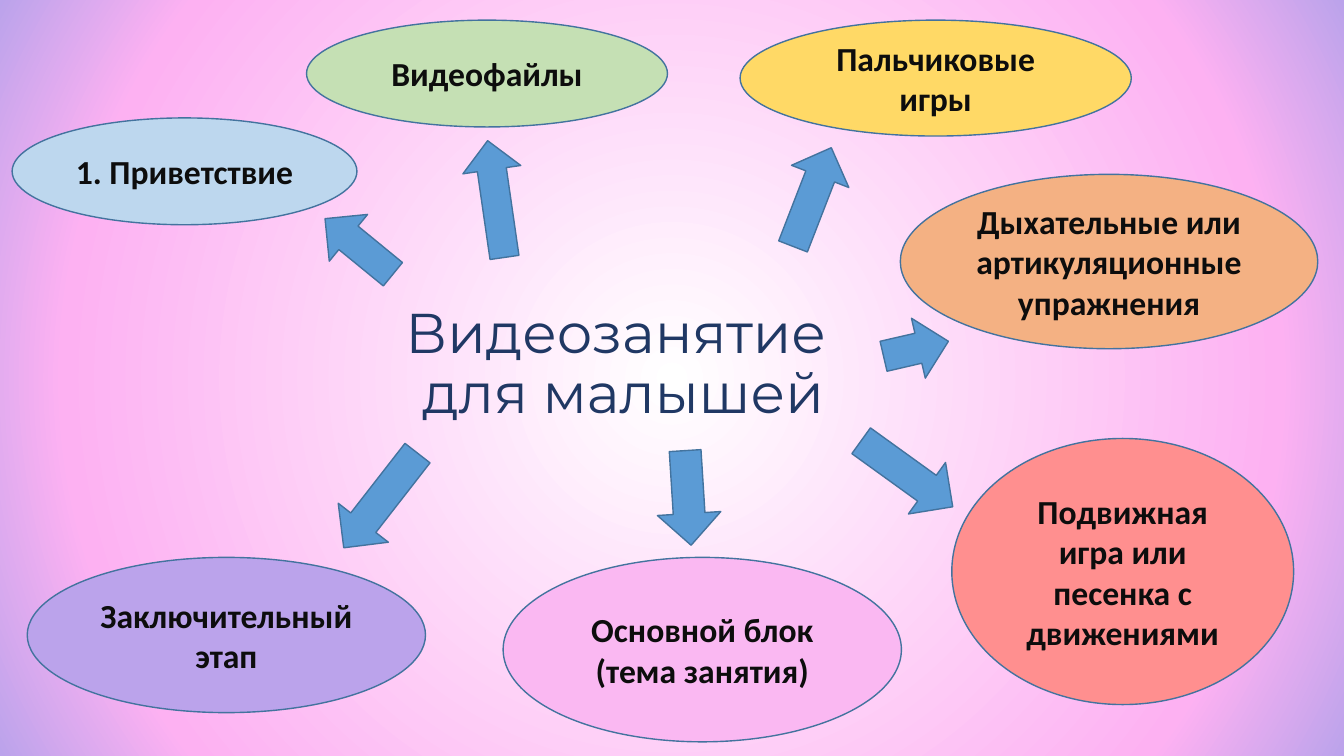
import pptx
import pptx.dml.color
import pptx.enum.shapes
import pptx.enum.text
import pptx.oxml
import pptx.oxml.ns
import pptx.util

COLORS = {
    "white": "FFFFFF",
    "pink": "FDB1F2",
    "violet": "BBA3EB",
    "pale_blue": "CEE1F2",
    "navy": "203864",
    "text": "0D0D0D",
    "outline": "43739E",
    "arrow": "5B9BD5",
    "sky": "BDD7EE",
    "green": "C5E0B4",
    "yellow": "FFD966",
    "orange": "F4B183",
    "red": "FF8F8F",
    "orchid": "FAB8F2",
}

BACKGROUND_STOPS = [(0, "white"), (79, "pink"), (100, "violet"), (100, "pale_blue")]

# Each stage: paragraphs, fill, bubble box, arrow box, arrow rotation
STAGES = [
    (["1. Приветствие"], "sky", (0.12, 1.17, 3.42, 1.06), (3.26, 2.01, 0.6, 0.87), 129.3),
    (["Видеофайлы"], "green", (3.04, 0.2, 3.58, 1.06), (4.63, 1.39, 0.58, 1.17), 171.8),
    (["Пальчиковые игры"], "yellow", (7.34, 0.2, 3.88, 1.15), (7.75, 1.43, 0.61, 1.05), 201.2),
    (["Дыхательные или артикуляционные", "упражнения"], "orange",
     (8.93, 1.73, 4.14, 1.73), (8.78, 3.13, 0.61, 0.66), 257),
    (["Подвижная игра или песенка с движениями"], "red",
     (9.44, 4.35, 3.39, 2.64), (8.68, 4.14, 0.63, 1.12), 305.8),
    (["Основной блок (тема занятия)"], "orchid",
     (4.99, 5.53, 3.95, 1.83), (6.51, 4.47, 0.63, 0.94), 356.4),
    (["Заключительный этап"], "violet", (0.27, 5.53, 3.95, 1.54), (3.46, 4.37, 0.63, 1.19), 37.9),
]


def rgb(name):
    """Return the named palette colour."""
    return pptx.dml.color.RGBColor.from_string(COLORS[name])


def add_text_run(paragraph, text, font_name, size, color, bold):
    """Append one formatted run to a paragraph."""
    run = paragraph.add_run()
    run.text = text
    run.font.name = font_name
    run.font.size = pptx.util.Pt(size)
    run.font.bold = bold
    run.font.color.rgb = rgb(color)


def set_background(slide):
    """Fill the slide with a radial gradient from its centre."""
    slide.background.fill.gradient()
    gradient = slide.element.find(".//" + pptx.oxml.ns.qn("a:gradFill"))
    for child in list(gradient):
        gradient.remove(child)
    namespace = pptx.oxml.ns.nsdecls("a")
    stops = "".join(
        f'<a:gs pos="{position * 1000}"><a:srgbClr val="{COLORS[color]}"/></a:gs>'
        for position, color in BACKGROUND_STOPS
    )
    gradient.append(pptx.oxml.parse_xml(f"<a:gsLst {namespace}>{stops}</a:gsLst>"))
    gradient.append(pptx.oxml.parse_xml(
        f'<a:path {namespace} path="circle">'
        '<a:fillToRect l="50000" t="50000" r="50000" b="50000"/></a:path>'
    ))


def add_title(slide, box):
    """Place the two-line central title in the given box."""
    title = slide.shapes.title
    title.left, title.top, title.width, title.height = map(pptx.util.Inches, box)
    frame = title.text_frame
    frame.auto_size = pptx.enum.text.MSO_AUTO_SIZE.NONE
    frame.vertical_anchor = pptx.enum.text.MSO_ANCHOR.MIDDLE
    paragraph = frame.paragraphs[0]
    paragraph.alignment = pptx.enum.text.PP_ALIGN.CENTER
    paragraph.line_spacing = 0.9
    add_text_run(paragraph, "Видеозанятие ", "Montserrat", 40, "navy", False)
    paragraph.add_line_break()
    add_text_run(paragraph, "для малышей", "Montserrat", 40, "navy", False)


def add_outlined_shape(slide, kind, box, fill):
    """Add a filled preset shape with the common outline."""
    shape = slide.shapes.add_shape(kind, *map(pptx.util.Inches, box))
    shape.shadow.inherit = False
    shape.fill.solid()
    shape.fill.fore_color.rgb = rgb(fill)
    shape.line.color.rgb = rgb("outline")
    shape.line.width = pptx.util.Pt(1)
    return shape


def add_arrow(slide, box, rotation):
    """Add a block arrow turned towards its bubble."""
    arrow = add_outlined_shape(slide, pptx.enum.shapes.MSO_SHAPE.DOWN_ARROW, box, "arrow")
    arrow.rotation = rotation


def add_bubble(slide, box, fill, lines):
    """Add an ellipse with centred bold paragraphs."""
    bubble = add_outlined_shape(slide, pptx.enum.shapes.MSO_SHAPE.OVAL, box, fill)
    frame = bubble.text_frame
    frame.word_wrap = True
    frame.vertical_anchor = pptx.enum.text.MSO_ANCHOR.MIDDLE
    for index, line in enumerate(lines):
        paragraph = frame.add_paragraph() if index else frame.paragraphs[0]
        paragraph.alignment = pptx.enum.text.PP_ALIGN.CENTER
        add_text_run(paragraph, line, "Calibri", 24, "text", True)


def main():
    """Build and save the presentation."""
    presentation = pptx.Presentation()
    presentation.slide_width = pptx.util.Inches(13.33)
    presentation.slide_height = pptx.util.Inches(7.5)
    slide = presentation.slides.add_slide(presentation.slide_layouts.get_by_name("Title Only"))
    set_background(slide)
    add_title(slide, (0.43, 2.9, 11.5, 1.45))
    for lines, fill, bubble_box, arrow_box, rotation in STAGES:
        add_arrow(slide, arrow_box, rotation)
        add_bubble(slide, bubble_box, fill, lines)
    presentation.save("out.pptx")


if __name__ == "__main__":
    main()
